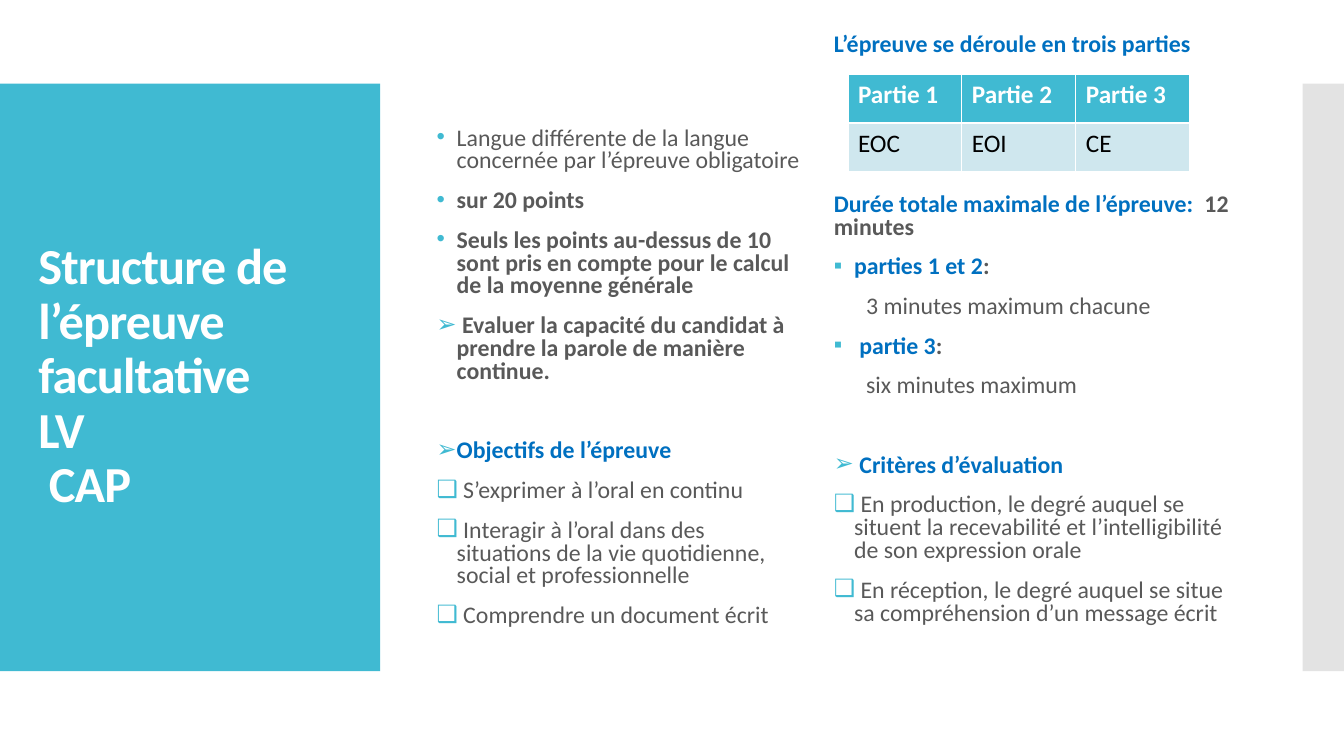
from lxml import etree
from pptx import Presentation
from pptx.dml.color import RGBColor
from pptx.enum.shapes import MSO_SHAPE
from pptx.enum.text import MSO_ANCHOR, MSO_AUTO_SIZE, PP_ALIGN
from pptx.oxml.ns import qn
from pptx.util import Inches, Pt

RECT = MSO_SHAPE.RECTANGLE
MIDDLE = MSO_ANCHOR.MIDDLE
LEFT = PP_ALIGN.LEFT
NO_FIT = MSO_AUTO_SIZE.NONE
TEAL, BLUE, GREY, WHITE = "40BAD2", "0070C0", "595959", "FFFFFF"
LINE = 28.5  # points from one paragraph to the next


def rgb(hex_color):
    return RGBColor.from_string(hex_color)


def add_run(p, text, size, color, bold):
    r = p.add_run()
    r.text = text
    r.font.name = "Calibri"
    r.font.size = Pt(size)
    r.font.bold = bold
    r.font.color.rgb = rgb(color)
    return r


prs = Presentation()
prs.slide_width, prs.slide_height = Inches(13.33), Inches(7.5)
s = prs.slides.add_slide(prs.slide_layouts[3])
title, left_body, right_body = s.placeholders

# Side panels, behind the text
for x, width, color in [(0, 3.77, TEAL), (12.92, 0.41, "E3E3E3")]:
    sp = s.shapes.add_shape(RECT, Inches(x), Inches(0.83), Inches(width), Inches(5.83))
    sp.shadow.inherit = False
    sp.fill.solid()
    sp.fill.fore_color.rgb = rgb(color)
    sp.line.fill.background()
    title._element.addprevious(sp._element)

# Placeholder positions
for sp, x, y, width, height in [
    (title, 0.28, 1.23, 3.22, 5.03),
    (left_body, 4.23, 0.95, 3.8, 5.6),
    (right_body, 8.17, 0.4, 4.18, 6.15),
]:
    sp.left, sp.top, sp.width, sp.height = Inches(x), Inches(y), Inches(width), Inches(height)
    tf = sp.text_frame
    tf.word_wrap = True
    tf.auto_size = NO_FIT
    tf.vertical_anchor = MIDDLE
right_body.text_frame.margin_bottom = Inches(0.45)

# Title
p = title.text_frame.paragraphs[0]
p.alignment = LEFT
p.line_spacing = 0.9
for i, text in enumerate(["Structure de l’épreuve facultative ", "LV", " CAP"]):
    if i:
        p.add_line_break()
    r = add_run(p, text, 36, WHITE, True)
    r._r.get_or_add_rPr().set("spc", "-60")

# Body text: bullet, left indent, extra lines above, runs (text, colour, bold)
left_items = [
    ("•", 0.2, 0, [("Langue différente de la langue concernée par l’épreuve obligatoire", GREY, False)]),
    ("•", 0.2, 0, [("sur 20 points", GREY, True)]),
    ("•", 0.2, 0, [("Seuls les points au-dessus de 10 sont pris en compte pour le calcul "
                    "de la moyenne générale", GREY, True)]),
    ("➢", 0.2, 0, [(" Evaluer la capacité du candidat à prendre la parole de manière continue.", GREY, True)]),
    ("➢", 0.2, 1, [("Objectifs de l’épreuve", BLUE, True)]),
    ("❑", 0.2, 0, [(" S’exprimer à l’oral en continu", GREY, False)]),
    ("❑", 0.2, 0, [(" Interagir à l’oral dans des situations de la vie quotidienne, "
                    "social et professionnelle", GREY, False)]),
    ("❑", 0.2, 0, [(" Comprendre un document écrit", GREY, False)]),
]
right_items = [
    (None, 0, 0, [("L’épreuve se déroule en trois parties", BLUE, True)]),
    (None, 0, 3, [("Durée totale maximale de l’épreuve:  ", BLUE, True), ("12 minutes", GREY, True)]),
    ("▪", 0.2, 0, [("parties 1 et 2", BLUE, True), (":", GREY, True)]),
    (None, 0.32, 0, [("3 minutes maximum chacune", GREY, False)]),
    ("▪", 0.2, 0, [(" partie 3", BLUE, True), (":", GREY, True)]),
    (None, 0.32, 0, [("six minutes maximum", GREY, False)]),
    ("➢", 0.2, 1, [(" Critères d’évaluation", BLUE, True)]),
    ("❑", 0.2, 0, [(" En production, le degré auquel se situent la recevabilité et "
                    "l’intelligibilité de son expression orale", GREY, False)]),
    ("❑", 0.2, 0, [(" En réception, le degré auquel se situe sa compréhension "
                    "d’un message écrit", GREY, False)]),
]
for body, items in [(left_body, left_items), (right_body, right_items)]:
    tf = body.text_frame
    for i, (bullet, indent, extra, runs) in enumerate(items):
        p = tf.add_paragraph() if i else tf.paragraphs[0]
        p.alignment = LEFT
        p.line_spacing = 0.8
        p.space_before = Pt(12 + extra * LINE)
        p.space_after = Pt(0)
        pPr = p._p.get_or_add_pPr()
        pPr.set("marL", str(Inches(indent)))
        pPr.set("indent", str(-Inches(indent) if bullet else 0))
        if bullet:
            clr = etree.SubElement(pPr, qn("a:buClr"))
            etree.SubElement(clr, qn("a:srgbClr")).set("val", TEAL)
            etree.SubElement(pPr, qn("a:buChar")).set("char", bullet)
        else:
            etree.SubElement(pPr, qn("a:buNone"))
        for text, color, bold in runs:
            add_run(p, text, 17, color, bold)

# Table of the three parts
rows = [
    (["Partie 1", "Partie 2", "Partie 3"], TEAL, WHITE, True),
    (["EOC", "EOI", "CE"], "CFE7EE", "000000", False),
]
table = s.shapes.add_table(2, 3, Inches(8.41), Inches(0.74), Inches(3.39), Inches(0.96)).table
for i, (texts, fill, color, bold) in enumerate(rows):
    for j, text in enumerate(texts):
        cell = table.cell(i, j)
        cell.fill.solid()
        cell.fill.fore_color.rgb = rgb(fill)
        add_run(cell.text_frame.paragraphs[0], text, 18, color, bold)

prs.save("out.pptx")
